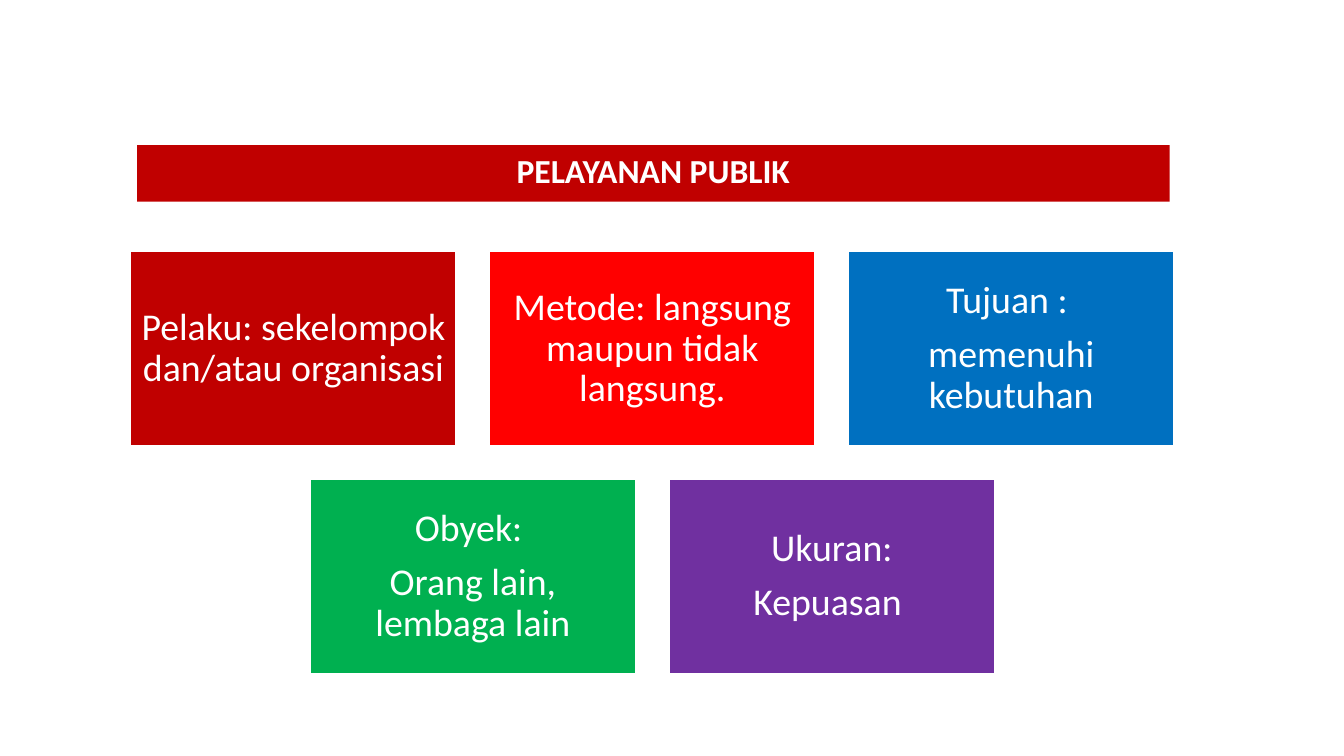
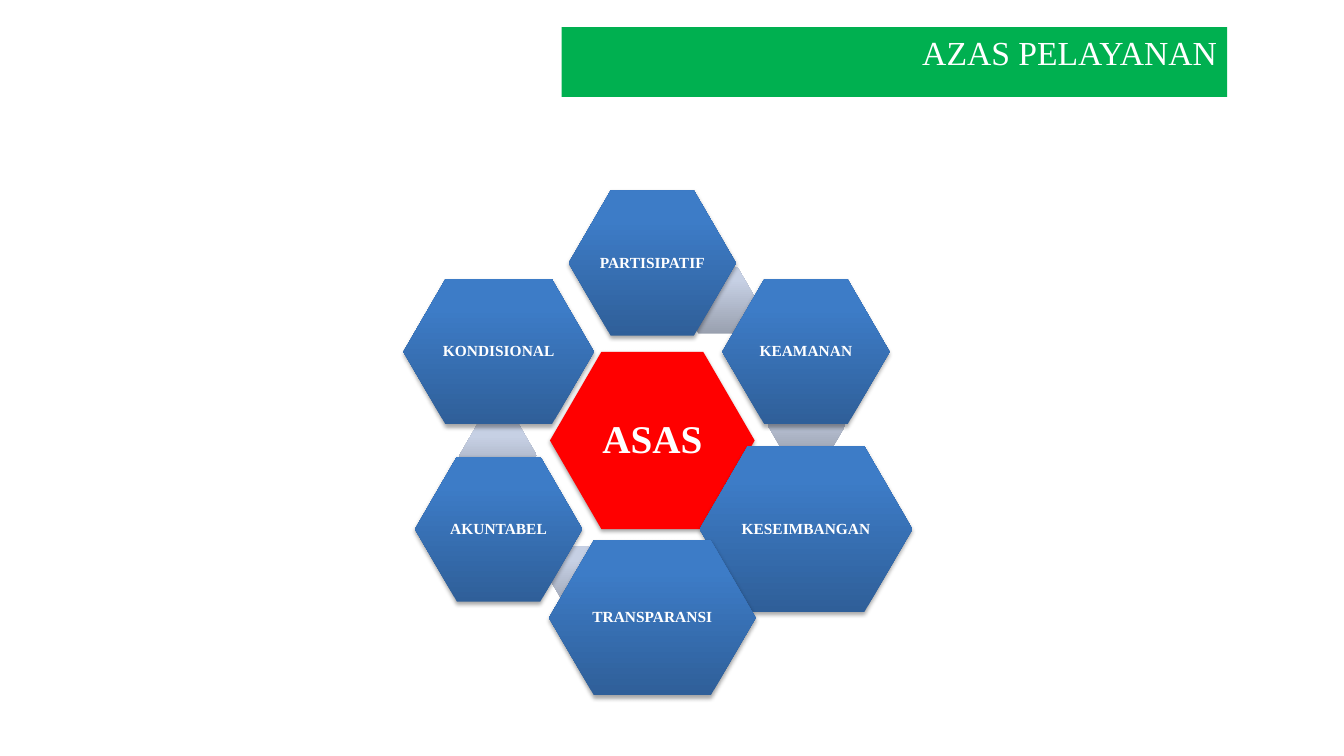
import math

from lxml import etree
from pptx import Presentation
from pptx.dml.color import RGBColor
from pptx.enum import shapes, text
from pptx.oxml import ns
from pptx.util import Inches, Pt

WHITE, RED, DARK_RED, GREEN = "FFFFFF", "FF0000", "C00000", "00B050"
HEX_BLUE, LINK_GREY = ("2F5F99", "3D7CC7"), ("99A0AF", "C6D0E4")
SANS, SERIF = "Calibri", "Times New Roman"
CENTER, RIGHT = text.PP_ALIGN.CENTER, text.PP_ALIGN.RIGHT
CENTER_X = 6.47

CARD_W, CARD_H, CARD_GAP, CARDS_TOP = 3.24, 1.94, 0.32, 2.49
CARD_ROWS = [
    [
        (DARK_RED, ["Pelaku: sekelompok dan/atau organisasi"]),
        (RED, ["Metode: langsung maupun tidak langsung."]),
        ("0070C0", ["Tujuan : ", "memenuhi kebutuhan"]),
    ],
    [
        (GREEN, ["Obyek: ", "Orang lain, lembaga lain"]),
        ("7030A0", ["Ukuran:", "Kepuasan "]),
    ],
]

RING_Y, RING_RADIUS = 4.37, 1.76
PRINCIPLES = [
    ("PARTISIPATIF", 1.66, 1.44, (7.12, 2.98)),
    ("KEAMANAN", 1.66, 1.44, (8.0, 4.22)),
    ("KESEIMBANGAN", 2.11, 1.64, (7.38, 5.61)),
    ("TRANSPARANSI", 2.05, 1.54, (5.84, 5.75)),
    ("AKUNTABEL", 1.66, 1.44, (4.94, 4.52)),
    ("KONDISIONAL", 1.89, 1.44, None),
]


def rgb(value):
    """Turn a hex string into a colour."""
    return RGBColor.from_string(value)


def paint(sp, fill):
    """Fill with one colour, or with a pair running from bottom to top."""
    if isinstance(fill, str):
        sp.fill.solid()
        sp.fill.fore_color.rgb = rgb(fill)
        return
    sp.fill.gradient()
    sp.fill.gradient_angle = 90
    for stop, color, position in zip(sp.fill.gradient_stops, fill, (0, 0.8)):
        stop.color.rgb = rgb(color)
        stop.position = position


def write(sp, lines, font, size, bold=False, align=CENTER, spacing=0.9):
    """Write one paragraph per line into a shape."""
    for i, line in enumerate(lines):
        tf = sp.text_frame
        p = tf.add_paragraph() if i else tf.paragraphs[0]
        p.alignment, p.line_spacing = align, spacing
        p.space_before = Pt(size * 0.35 if i else 0)
        r = p.add_run()
        r.text = line
        r.font.name, r.font.size, r.font.bold = font, Pt(size), bold
        r.font.color.rgb = rgb(WHITE)


def set_frame(sp, inset, wrap=True):
    """Centre the text vertically with equal insets."""
    tf = sp.text_frame
    tf.word_wrap = wrap
    tf.vertical_anchor = text.MSO_ANCHOR.MIDDLE
    tf.margin_left = tf.margin_right = Inches(inset)
    tf.margin_top = tf.margin_bottom = Inches(inset)


def add_shadow(sp):
    """Cast a soft shadow straight down."""
    effects = sp._element.spPr.find(ns.qn("a:effectLst"))
    shadow = etree.SubElement(
        effects, ns.qn("a:outerShdw"), blurRad=str(Pt(3.1)), dist=str(Pt(1.8)),
        dir="5400000", rotWithShape="0")
    color = etree.SubElement(shadow, ns.qn("a:srgbClr"), val="000000")
    etree.SubElement(color, ns.qn("a:alpha"), val="35000")


def add_title(prs, title, box, fill, font, bold, align):
    """Add a slide whose title is a coloured band."""
    s = prs.slides.add_slide(prs.slide_layouts[5])
    sp = s.shapes.title
    sp.left, sp.top, sp.width, sp.height = map(Inches, box)
    paint(sp, fill)
    sp.text_frame.auto_size = text.MSO_AUTO_SIZE.NONE
    sp.text_frame.vertical_anchor = text.MSO_ANCHOR.TOP
    write(sp, [title], font, 24, bold, align, 1)
    return s


def add_shape(s, kind, x, y, w, h, fill):
    """Add a borderless shape centred on a point."""
    sp = s.shapes.add_shape(kind, *map(Inches, (x - w / 2, y - h / 2, w, h)))
    sp.shadow.inherit = False
    sp.line.fill.background()
    paint(sp, fill)
    return sp


def add_hexagon(s, x, y, w, h, fill, label=None, size=11):
    """Add a hexagon, with a shadow when it carries a label."""
    sp = add_shape(s, shapes.MSO_SHAPE.HEXAGON, x, y, w, h, fill)
    sp.adjustments[0] = 0.29
    if label:
        add_shadow(sp)
        set_frame(sp, 0.02, wrap=False)
        write(sp, [label], SERIF, size, bold=True)


def add_cards(s):
    """Lay out the cards in centred rows."""
    for row, cards in enumerate(CARD_ROWS):
        y = CARDS_TOP + CARD_H / 2 + row * (CARD_H + CARD_GAP)
        for col, (fill, lines) in enumerate(cards):
            x = CENTER_X + (col - (len(cards) - 1) / 2) * (CARD_W + CARD_GAP)
            sp = add_shape(s, shapes.MSO_SHAPE.RECTANGLE, x, y, CARD_W, CARD_H, fill)
            sp.line.color.rgb = rgb(WHITE)
            sp.line.width = Pt(2)
            set_frame(sp, 0.11)
            write(sp, lines, SANS, 27)


def add_ring(s):
    """Place the principles clockwise around the central hexagon."""
    add_hexagon(s, CENTER_X, RING_Y, 2.03, 1.76, RED, "ASAS", 28)
    for i, (label, w, h, link) in enumerate(PRINCIPLES):
        angle = 2 * math.pi * i / len(PRINCIPLES)
        x = CENTER_X + RING_RADIUS * math.sin(angle)
        y = RING_Y - RING_RADIUS * math.cos(angle)
        if link:
            add_hexagon(s, *link, 0.77, 0.66, LINK_GREY)
        add_hexagon(s, x, y, w, h, HEX_BLUE, label)


def main():
    """Build and save the presentation."""
    prs = Presentation()
    prs.slide_width, prs.slide_height = Inches(13.33), Inches(7.5)
    add_cards(add_title(prs, "PELAYANAN PUBLIK", (1.36, 1.44, 10.24, 0.56),
                        DARK_RED, SANS, True, CENTER))
    add_ring(add_title(prs, "AZAS PELAYANAN", (5.57, 0.27, 6.6, 0.69),
                       GREEN, SERIF, False, RIGHT))
    prs.save("out.pptx")


if __name__ == "__main__":
    main()
